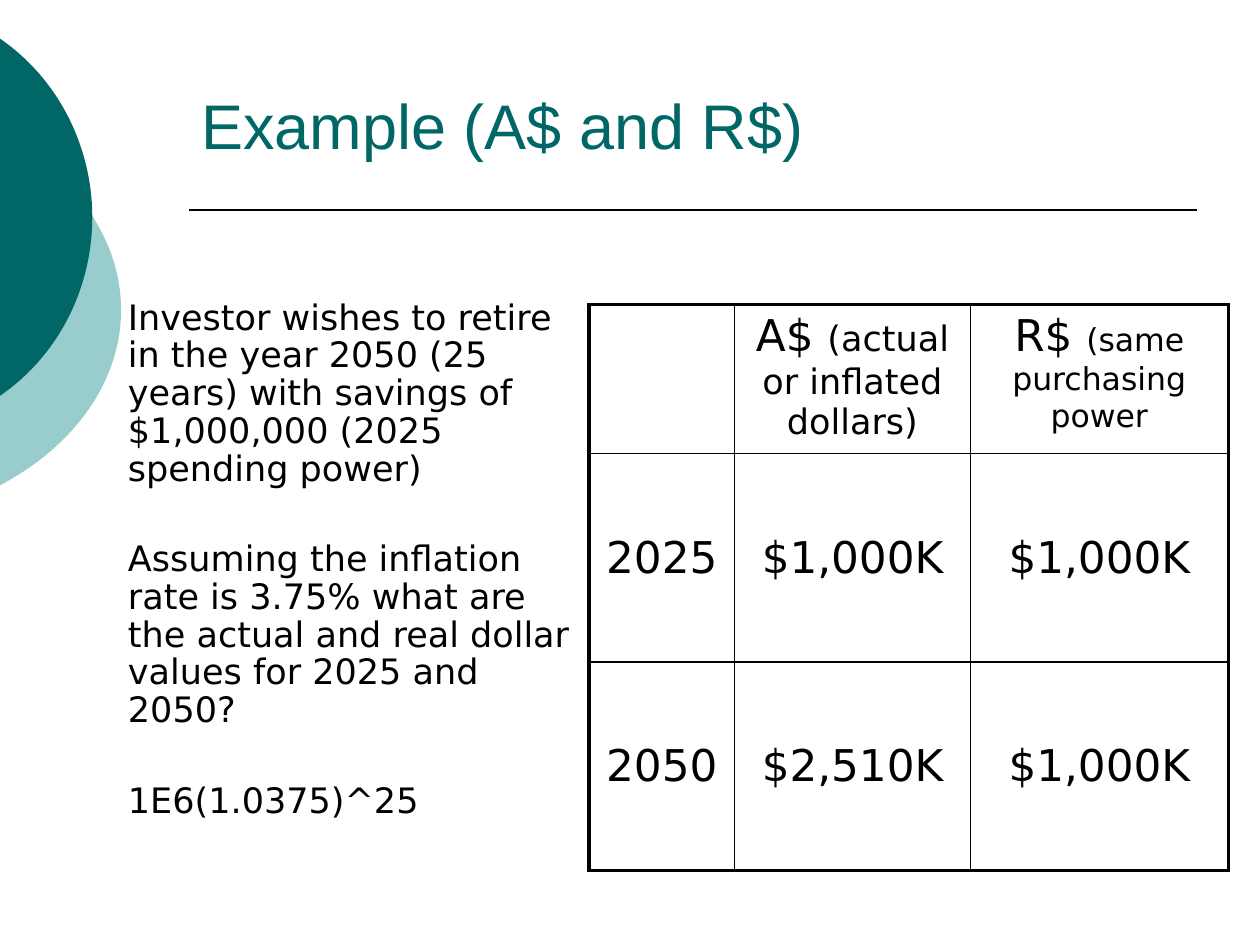
from dataclasses import dataclass
from lxml.etree import SubElement
from pptx import Presentation
from pptx.dml.color import RGBColor as Rgb
from pptx.enum.shapes import MSO_CONNECTOR as Connector
from pptx.enum.text import MSO_ANCHOR as Anchor, PP_ALIGN as Align
from pptx.oxml.ns import qn
from pptx.util import Cm, Pt


@dataclass(frozen=True)
class Theme:
    dark: str = "006666"
    pale: str = "99CCCC"
    ink: str = "000000"
    paper: str = "FFFFFF"
    heading_font: str = "Arial"
    body_font: str = "DejaVu Sans"
    heading: int = 36
    body: int = 20
    figure: int = 25
    note: int = 18
    thin: float = 1
    thick: float = 2.25


theme = Theme()

TITLE = "Example (A$ and R$)"
BODY = [
    "Investor wishes to retire in the year 2050 (25 years) with savings of $1,000,000 (2025 spending power)",
    "Assuming the inflation rate is 3.75% what are the actual and real dollar values for 2025 and 2050?",
    "1E6(1.0375)^25",
]
TABLE = [
    [
        [],
        [("A$ ", theme.figure), ("(actual or inflated dollars)", theme.body)],
        [("R$ ", theme.figure), ("(same purchasing power", theme.note)],
    ],
    [[(value, theme.figure)] for value in ("2025", "$1,000K", "$1,000K")],
    [[(value, theme.figure)] for value in ("2050", "$2,510K", "$1,000K")],
]
COLUMN_WIDTHS = [2.94, 4.75, 5.2]
ROW_HEIGHTS = [3, 4.2, 4.2]
DISCS = [
    {"color": theme.pale, "frame": (-8.99, 1.91, 11.43, 8.69), "start": (-0.03, 2.69),
     "curves": [((1.52, 3.51), (2.44, 4.83), (2.44, 6.25)),
                ((2.44, 7.67), (1.52, 8.99), (-0.03, 9.8))]},
    {"color": theme.dark, "frame": (-6.73, 0, 8.59, 8.76), "start": (-0.03, 0.76),
     "curves": [((1.17, 1.57), (1.86, 2.95), (1.86, 4.38)),
                ((1.86, 5.82), (1.17, 7.19), (-0.03, 8))]},
]


def add_disc(page, color, frame, start, curves):
    left, top, width, height = map(Cm, frame)
    builder = page.shapes.build_freeform(Cm(start[0]), Cm(start[1]))
    builder.add_line_segments([tuple(map(Cm, curve[-1])) for curve in curves], close=True)
    disc = builder.convert_to_shape()
    disc.left, disc.top, disc.width, disc.height = left, top, width, height

    outline = next(disc._element.iter(qn("a:path")))
    outline.set("w", str(width))
    outline.set("h", str(height))
    for step in list(outline):
        outline.remove(step)
    steps = [("moveTo", (start,))] + [("cubicBezTo", curve) for curve in curves]
    for name, points in steps:
        step = SubElement(outline, qn("a:" + name))
        for x, y in points:
            SubElement(step, qn("a:pt"), x=str(Cm(x) - left), y=str(Cm(y) - top))
    SubElement(outline, qn("a:close"))

    disc.shadow.inherit = False
    disc.fill.solid()
    disc.fill.fore_color.rgb = Rgb.from_string(color)
    disc.line.fill.background()


def add_span(para, text, size, font=theme.body_font, color=theme.ink):
    span = para.add_run()
    span.text = text
    span.font.size = Pt(size)
    span.font.name = font
    span.font.color.rgb = Rgb.from_string(color)


def add_box(page, left, top, width, height, anchor):
    box = page.shapes.add_textbox(Cm(left), Cm(top), Cm(width), Cm(height))
    box.text_frame.word_wrap = True
    box.text_frame.vertical_anchor = anchor
    return box.text_frame


def add_rule(page):
    rule = page.shapes.add_connector(
        Connector.STRAIGHT, Cm(3.81), Cm(4.23), Cm(24.13), Cm(4.23))
    rule.line.color.rgb = Rgb.from_string(theme.ink)
    rule.line.width = Pt(theme.thin)
    SubElement(rule._element.spPr, qn("a:effectLst"))


def set_borders(cell, outer_sides):
    properties = cell._tc.get_or_add_tcPr()
    for index, (side, outer) in enumerate(zip("LRTB", outer_sides)):
        width = theme.thick if outer else theme.thin
        border = SubElement(properties, qn("a:ln" + side), w=str(Pt(width)))
        fill = SubElement(border, qn("a:solidFill"))
        SubElement(fill, qn("a:srgbClr"), val=theme.ink)
        properties.insert(index, border)


def fill_cell(cell, spans, anchor):
    cell.fill.background()
    cell.vertical_anchor = anchor
    para = cell.text_frame.paragraphs[0]
    para.alignment = Align.CENTER
    for text, size in spans:
        add_span(para, text, size)


def add_dollar_table(page):
    table = page.shapes.add_table(
        len(ROW_HEIGHTS), len(COLUMN_WIDTHS), Cm(11.87), Cm(6.14),
        Cm(sum(COLUMN_WIDTHS)), Cm(sum(ROW_HEIGHTS))).table
    table.first_row = table.horz_banding = False
    for column, width in zip(table.columns, COLUMN_WIDTHS):
        column.width = Cm(width)
    for row, height in zip(table.rows, ROW_HEIGHTS):
        row.height = Cm(height)
    last_row, last_column = len(ROW_HEIGHTS) - 1, len(COLUMN_WIDTHS) - 1
    for r, row in enumerate(TABLE):
        for c, spans in enumerate(row):
            cell = table.cell(r, c)
            fill_cell(cell, spans, Anchor.MIDDLE if r else Anchor.TOP)
            set_borders(cell, (c == 0, c == last_column, r == 0, r == last_row))


def main():
    deck = Presentation()
    deck.slide_width, deck.slide_height = Cm(25.4), Cm(19.05)
    page = deck.slides.add_slide(deck.slide_layouts[6])
    page.background.fill.solid()
    page.background.fill.fore_color.rgb = Rgb.from_string(theme.paper)
    for disc in DISCS:
        add_disc(page, **disc)
    add_rule(page)

    title = add_box(page, 3.81, 1.52, 20.32, 1.88, Anchor.BOTTOM)
    add_span(title.paragraphs[0], TITLE, theme.heading, theme.heading_font, theme.dark)

    body = add_box(page, 2.33, 5.92, 9.55, 11.43, Anchor.TOP)
    for index, text in enumerate(BODY):
        para = body.add_paragraph() if index else body.paragraphs[0]
        para.line_spacing = 0.9
        para.space_before = Pt(30 if index else 0)
        add_span(para, text, theme.body)

    add_dollar_table(page)
    deck.save("out.pptx")


if __name__ == "__main__":
    main()
